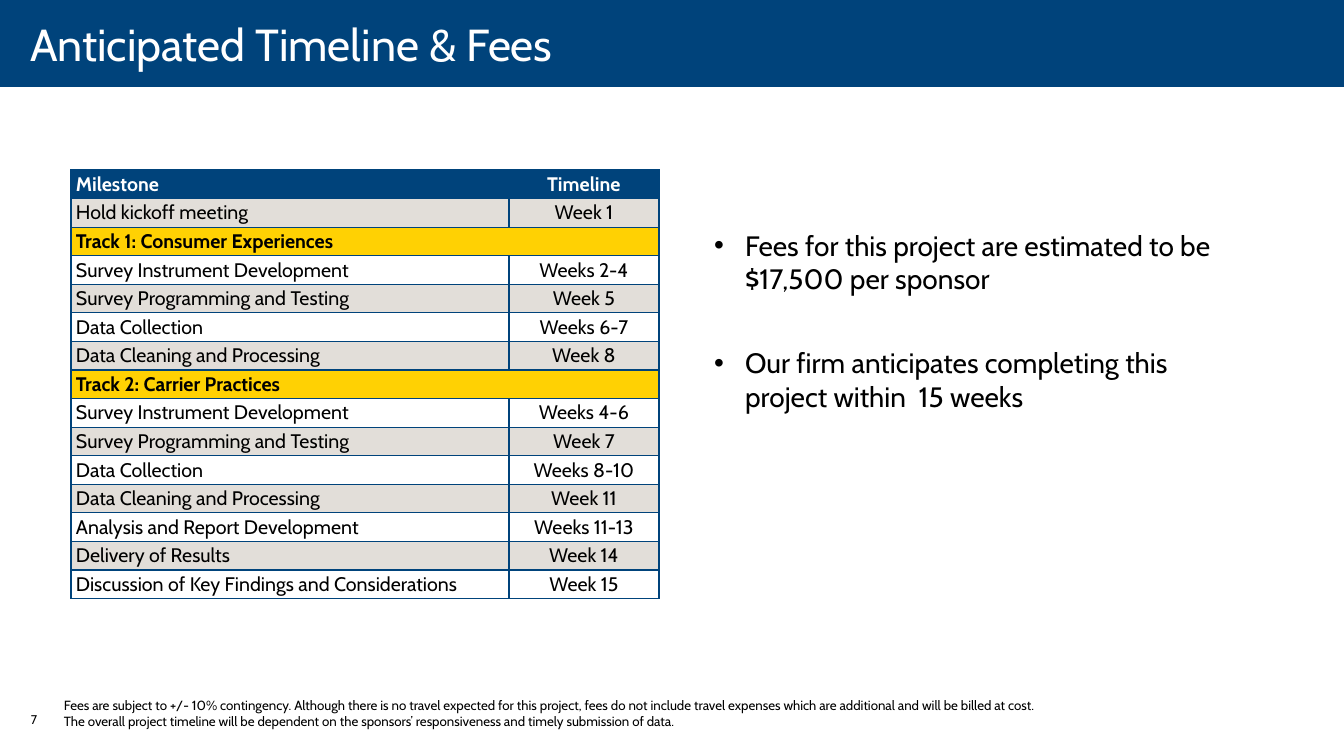
from lxml import etree
from pptx import Presentation
from pptx.dml.color import RGBColor
from pptx.enum.shapes import MSO_SHAPE
from pptx.enum.text import MSO_ANCHOR, MSO_AUTO_SIZE, PP_ALIGN
from pptx.oxml.ns import qn
from pptx.util import Pt

RECT = MSO_SHAPE.RECTANGLE
MIDDLE, TOP = MSO_ANCHOR.MIDDLE, MSO_ANCHOR.TOP
LEFT, CENTER = PP_ALIGN.LEFT, PP_ALIGN.CENTER
NO_AUTOSIZE = MSO_AUTO_SIZE.NONE

FONT = "Cabin"
NAVY, GOLD, GREY, WHITE, BLACK = "00437B", "FFD103", "E2DED9", "FFFFFF", "000000"

TITLE = "Anticipated Timeline & Fees"
HEADER = ("Milestone", "Timeline")
# A row without a timeline is a track heading across both columns.
MILESTONES = [
    ("Hold kickoff meeting", "Week 1"),
    ("Track 1: Consumer Experiences", None),
    ("Survey Instrument Development", "Weeks 2-4"),
    ("Survey Programming and Testing", "Week 5"),
    ("Data Collection", "Weeks 6-7"),
    ("Data Cleaning and Processing", "Week 8"),
    ("Track 2: Carrier Practices", None),
    ("Survey Instrument Development", "Weeks 4-6"),
    ("Survey Programming and Testing", "Week 7"),
    ("Data Collection", "Weeks 8-10"),
    ("Data Cleaning and Processing", "Week 11"),
    ("Analysis and Report Development", "Weeks 11-13"),
    ("Delivery of Results", "Week 14"),
    ("Discussion of Key Findings and Considerations", "Week 15"),
]
BULLETS = [
    "Fees for this project are estimated to be $17,500 per sponsor",
    "Our firm anticipates completing this project within  15 weeks",
]
FOOTNOTES = [
    "Fees are subject to +/- 10% contingency. Although there is no travel expected for this project, "
    "fees do not include travel expenses which are additional and will be billed at cost.",
    "The overall project timeline will be dependent on the sponsors’ responsiveness "
    "and timely submission of data.",
]
PAGE_NUMBER = "7"

SLIDE_SIZE = (1344, 756)
BAND_BOX = (0, 0, 1344, 87)
TITLE_BOX = (0, -5, 1344, 98)
TABLE_BOX = (71, 170, 588, 429)
COLUMN_WIDTHS = (438, 150)
BULLET_BOX = (704, 223, 556, 197)
BULLET_INDENT = 31
FOOTNOTE_BOX = (54, 692, 1019, 42)
NUMBER_BOX = (21, 707, 49, 40)


def px(n):
    return round(n * 914400 / 100.8)


def box(lengths):
    return [px(n) for n in lengths]


def color(hex_string):
    return RGBColor.from_string(hex_string)


def style(p, size, hex_string=BLACK, bold=False, align=LEFT):
    p.alignment = align
    for r in p.runs:
        r.font.name, r.font.size, r.font.bold = FONT, Pt(size), bold
        r.font.color.rgb = color(hex_string)


def place(s, lengths):
    s.left, s.top, s.width, s.height = box(lengths)


def add_band(slide):
    s = slide.shapes.add_shape(RECT, *box(BAND_BOX))
    s.shadow.inherit = False
    s.fill.solid()
    s.fill.fore_color.rgb = color(NAVY)
    s.line.fill.background()
    slide.shapes._spTree.insert(2, s._element)  # behind the title


def add_title(slide):
    s = slide.shapes.title
    place(s, TITLE_BOX)
    tf = s.text_frame
    tf.text = TITLE
    tf.auto_size, tf.vertical_anchor = NO_AUTOSIZE, MIDDLE
    tf.margin_left, tf.margin_right = px(30), px(20)
    tf.margin_top = tf.margin_bottom = 0
    style(tf.paragraphs[0], 32, WHITE)


def add_text(slide, lengths, lines, size):
    tf = slide.shapes.add_textbox(*box(lengths)).text_frame
    tf.word_wrap = True
    tf.text = "\n".join(lines)
    for p in tf.paragraphs:
        style(p, size)


def add_borders(cell):
    tcPr = cell._tc.get_or_add_tcPr()
    for i, side in enumerate(("lnL", "lnR", "lnT", "lnB")):
        ln = etree.Element(qn(f"a:{side}"), w=str(Pt(1)))
        fill = etree.SubElement(ln, qn("a:solidFill"))
        etree.SubElement(fill, qn("a:srgbClr"), val=NAVY)
        tcPr.insert(i, ln)


def fill_cell(cell, text, fill, font_color, bold, align):
    cell.margin_left = cell.margin_right = px(5)
    cell.margin_top = cell.margin_bottom = 0
    cell.vertical_anchor = MIDDLE
    cell.fill.solid()
    cell.fill.fore_color.rgb = color(fill)
    add_borders(cell)
    cell.text_frame.text = text
    style(cell.text_frame.paragraphs[0], 14, font_color, bold, align)


def add_timeline(slide):
    rows = [HEADER] + MILESTONES
    table = slide.shapes.add_table(len(rows), len(HEADER), *box(TABLE_BOX)).table
    table.first_row = table.horz_banding = False
    for column, width in zip(table.columns, COLUMN_WIDTHS):
        column.width = px(width)
    striped = True
    for i, row in enumerate(rows):
        table.rows[i].height = px(TABLE_BOX[3]) // len(rows)
        is_track = row[1] is None
        if i == 0:
            look = (NAVY, WHITE, True)
        elif is_track:
            look = (GOLD, BLACK, True)
        else:
            look = (GREY if striped else WHITE, BLACK, False)
            striped = not striped
        for j, align in enumerate((LEFT, CENTER)):
            fill_cell(table.cell(i, j), row[j] or "", *look, align)
        if is_track:
            table.cell(i, 0).merge(table.cell(i, 1))


def add_bullets(slide):
    s = slide.placeholders[1]
    place(s, BULLET_BOX)
    tf = s.text_frame
    tf.text = "\n".join(BULLETS)
    tf.auto_size, tf.vertical_anchor = NO_AUTOSIZE, TOP
    for p in tf.paragraphs:
        pPr = p._p.get_or_add_pPr()
        pPr.set("marL", str(px(BULLET_INDENT)))
        pPr.set("indent", str(-px(BULLET_INDENT)))
        etree.SubElement(pPr, qn("a:buFont"), typeface="Arial")
        etree.SubElement(pPr, qn("a:buChar"), char="•")
        p.space_before, p.space_after = Pt(0), Pt(36)
        style(p, 20)


def main():
    prs = Presentation()
    prs.slide_width, prs.slide_height = box(SLIDE_SIZE)
    slide = prs.slides.add_slide(prs.slide_layouts[1])
    add_band(slide)
    add_title(slide)
    add_text(slide, NUMBER_BOX, [PAGE_NUMBER], 9)
    add_timeline(slide)
    add_text(slide, FOOTNOTE_BOX, FOOTNOTES, 9.5)
    add_bullets(slide)
    prs.save("out.pptx")


if __name__ == "__main__":
    main()
